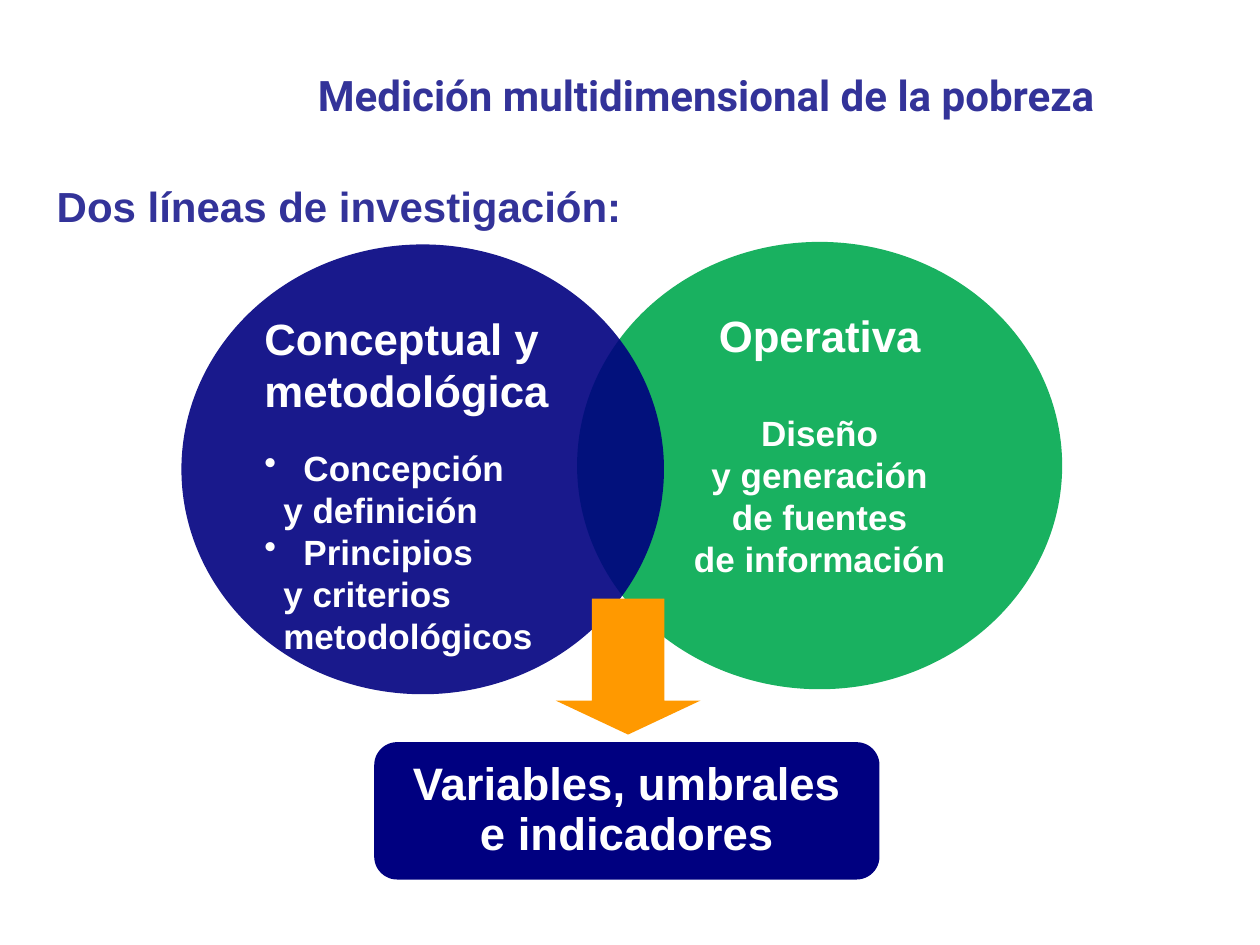
"""Build the slide on the two lines of research into multidimensional poverty."""
from lxml import etree
from pptx import Presentation
from pptx import util as u
from pptx.dml.color import RGBColor
from pptx.enum import shapes, text
from pptx.oxml import ns

CELL = u.Inches(1)
COLS, ROWS = 10, 7.5
NAVY = RGBColor(0x00, 0x00, 0x80)
GREEN = RGBColor(0x00, 0xA9, 0x4F)
ORANGE = RGBColor(0xFF, 0x99, 0x00)
INDIGO = RGBColor(0x33, 0x33, 0x99)
WHITE = RGBColor(0xFF, 0xFF, 0xFF)
SHAPE = shapes.MSO_SHAPE
LEFT, CENTER = text.PP_ALIGN.LEFT, text.PP_ALIGN.CENTER
TOP, MIDDLE = text.MSO_ANCHOR.TOP, text.MSO_ANCHOR.MIDDLE


def grid(*cells):
    """Turn columns and rows of the slide grid into lengths."""
    return [u.Emu(round(c * CELL)) for c in cells]


def add_shape(s, kind, at, fill=None, alpha=None):
    """Add a borderless preset shape, with its fill opacity in percent."""
    sp = s.shapes.add_shape(kind, *grid(*at))
    sp.shadow.inherit = False
    sp.line.fill.background()
    if fill is None:
        sp.fill.background()
        return sp
    sp.fill.solid()
    sp.fill.fore_color.rgb = fill
    if alpha:
        color = sp.fill._xPr.find(".//" + ns.qn("a:srgbClr"))
        etree.SubElement(color, ns.qn("a:alpha"), val=str(alpha * 1000))
    return sp


def set_frame(sp, insets=(0.1, 0.05, 0.1, 0.05), anchor=TOP, wrap=True):
    """Set the insets, anchor and wrapping of a shape's text."""
    tf = sp.text_frame
    tf.margin_left, tf.margin_top, tf.margin_right, tf.margin_bottom = grid(*insets)
    tf.vertical_anchor = anchor
    tf.word_wrap = wrap
    return tf


def add_text(tf, words, size, color=WHITE, font="Arial", align=LEFT,
             spacing=1, before=0, indent=0, hanging=0):
    """Write one bold paragraph; a hanging indent gives it a bullet."""
    p = tf.paragraphs[0] if not tf.text else tf.add_paragraph()
    p.alignment = align
    p.line_spacing = spacing
    p.space_before = u.Pt(before)
    if indent:
        pPr = p._p.get_or_add_pPr()
        pPr.set("marL", str(u.Inches(indent)))
        pPr.set("indent", str(-u.Inches(hanging)))
        if hanging:
            etree.SubElement(pPr, ns.qn("a:buChar"), char="•")
    p.text = words
    for r in p.runs:
        r.font.name, r.font.size, r.font.bold = font, u.Pt(size), True
        r.font.color.rgb = color


def add_circles(s):
    """Draw the two overlapping lines of research."""
    insets = (0.1, 0.01, 0.1, 0.05)
    tf = set_frame(add_shape(s, SHAPE.OVAL, (4.58, 1.92, 3.85, 3.55), GREEN, 90), insets)
    add_text(tf, "Operativa", 25, align=CENTER)
    lines = ["Diseño", "y generación", "de fuentes", "de información"]
    for i, line in enumerate(lines):
        add_text(tf, line, 20, align=CENTER, before=0 if i else 29)

    tf = set_frame(add_shape(s, SHAPE.OVAL, (1.44, 1.94, 3.83, 3.57), NAVY, 90), insets)
    add_text(tf, "Conceptual y metodológica", 25)
    points = [("Concepción", "y definición"),
              ("Principios", "y criterios", "metodológicos")]
    for i, (head, *rest) in enumerate(points):
        add_text(tf, head, 20, before=0 if i else 17, indent=0.31, hanging=0.31)
        for line in rest:
            add_text(tf, line, 20, indent=0.15)


def main():
    """Build and save the slide."""
    prs = Presentation()
    prs.slide_width, prs.slide_height = grid(COLS, ROWS)
    s = prs.slides.add_slide(prs.slide_layouts[6])
    add_circles(s)

    title = add_shape(s, SHAPE.ROUNDED_RECTANGLE, (2.4, 0.52, 7.35, 0.51))
    add_text(set_frame(title), "Medición multidimensional de la pobreza", 24,
             INDIGO, font="Roboto", spacing=0.9)

    flat = (0, 0.05, 0, 0.05)
    heading = s.shapes.add_textbox(*grid(0.45, 1.26, 4.59, 0.8))
    add_text(set_frame(heading, flat, MIDDLE, wrap=False),
             "Dos líneas de investigación:", 24, INDIGO, spacing=0.9)

    result = add_shape(s, SHAPE.ROUNDED_RECTANGLE, (2.97, 5.89, 4.01, 1.09), NAVY)
    add_text(set_frame(result, flat, MIDDLE, wrap=False),
             "Variables, umbrales\ve indicadores", 26, align=CENTER, spacing=0.9)

    arrow = add_shape(s, SHAPE.DOWN_ARROW, (4.41, 4.75, 1.15, 1.08), ORANGE)
    arrow.adjustments[0], arrow.adjustments[1] = 0.5, 0.25
    prs.save("out.pptx")


if __name__ == "__main__":
    main()
